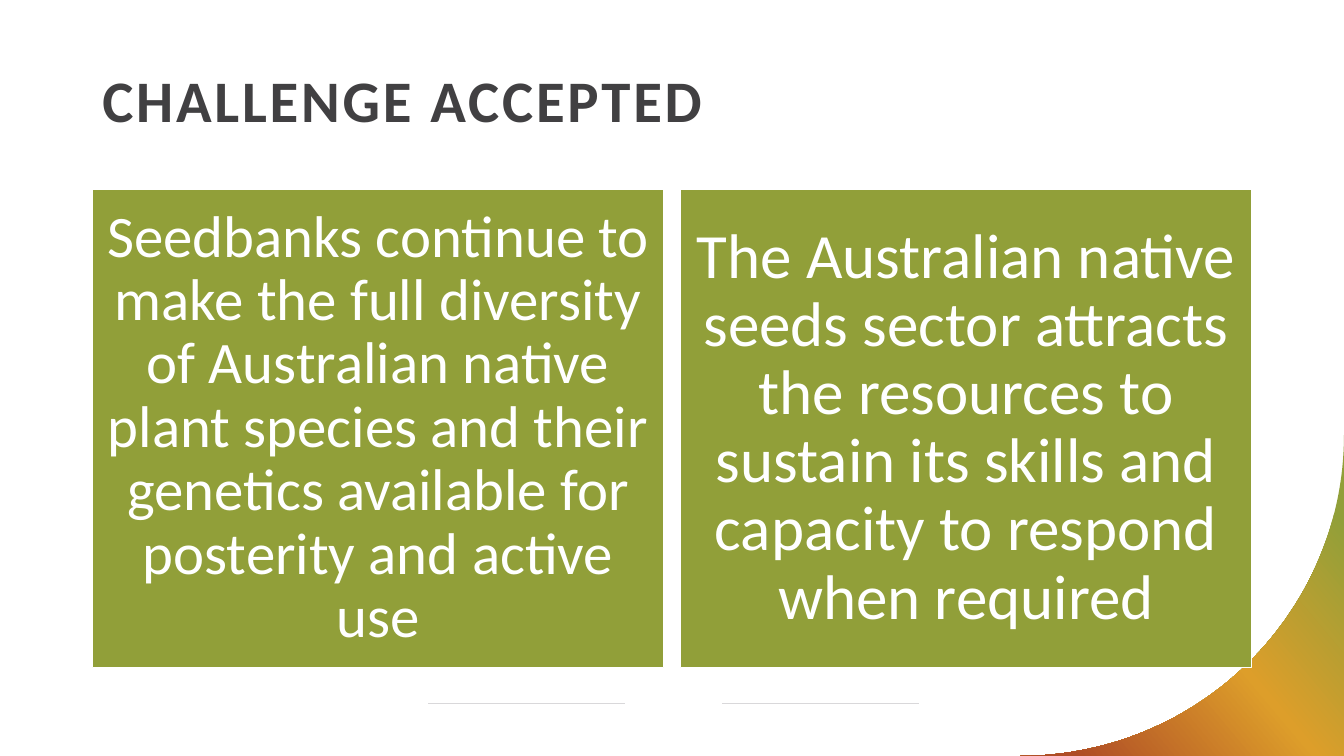
from copy import deepcopy
from math import cos, pi, sin

from lxml import etree
from pptx import Presentation
from pptx.dml.color import RGBColor
from pptx.enum.shapes import MSO_CONNECTOR, MSO_SHAPE
from pptx.enum.text import MSO_ANCHOR, PP_ALIGN
from pptx.oxml.ns import qn
from pptx.util import Inches, Pt

STRAIGHT = MSO_CONNECTOR.STRAIGHT
RECTANGLE = MSO_SHAPE.RECTANGLE
TOP, MIDDLE = MSO_ANCHOR.TOP, MSO_ANCHOR.MIDDLE
LEFT, CENTER = PP_ALIGN.LEFT, PP_ALIGN.CENTER

WHITE = RGBColor(0xFF, 0xFF, 0xFF)
CHARCOAL = RGBColor(0x41, 0x40, 0x42)
PALE_GREY = RGBColor(0xD9, 0xD8, 0xDA)
OLIVE = RGBColor(0x91, 0x9F, 0x39)
AMBER = RGBColor(0xDD, 0x9E, 0x2A)
RUST = RGBColor(0xAF, 0x4C, 0x26)

COLUMNS, ROWS = 160, 90
CARD_LEFT, CARD_PITCH = 11, 70
RULE_LEFT, RULE_PITCH, RULE_WIDTH = 51, 35, 23.4
CARDS = [
    ("Seedbanks continue to make the full diversity of Australian native plant "
     "species and their genetics available for posterity and active use", 42),
    ("The Australian native seeds sector attracts the resources to sustain its "
     "skills and capacity to respond when required", 45),
]


class SeedPage:
    font_name = "Calibri"
    line_spacing = 0.9

    def __init__(self, deck):
        self.page = deck.slides.add_slide(deck.slide_layouts[6])
        self.column = deck.slide_width / COLUMNS
        self.row = deck.slide_height / ROWS

    def place(self, left, top, width, height):
        return (round(left * self.column), round(top * self.row),
                round(width * self.column), round(height * self.row))

    def set_text(self, box, text, size, color, align, anchor):
        frame = box.text_frame
        frame.word_wrap = True
        frame.vertical_anchor = anchor
        frame.text = text
        para = frame.paragraphs[0]
        para.alignment = align
        para.line_spacing = self.line_spacing
        span = para.runs[0]
        span.font.name = self.font_name
        span.font.size = Pt(size)
        span.font.color.rgb = color
        return span

    def title(self, text, left, top, width, height):
        box = self.page.shapes.add_textbox(*self.place(left, top, width, height))
        span = self.set_text(box, text, 42, CHARCOAL, LEFT, TOP)
        span.font.bold = True
        span.font._element.set("spc", "200")

    def card(self, text, size, left, top, width, height):
        box = self.page.shapes.add_shape(RECTANGLE, *self.place(left, top, width, height))
        box.shadow.inherit = False
        box.fill.solid()
        box.fill.fore_color.rgb = OLIVE
        box.line.color.rgb = WHITE
        box.line.width = Pt(1)
        frame = box.text_frame
        frame.margin_left = frame.margin_right = Inches(0.12)
        frame.margin_top = frame.margin_bottom = Inches(0.12)
        self.set_text(box, text, size, WHITE, CENTER, MIDDLE)

    def rule(self, left, top, width):
        x, y, length, _ = self.place(left, top, width, 0)
        line = self.page.shapes.add_connector(STRAIGHT, x, y, x + length, y)
        line.line.color.rgb = PALE_GREY
        line.line.width = Pt(0.5)
        etree.SubElement(line._element.spPr, qn("a:effectLst"))

    def corner(self, left, top, stops, steps=60):
        width, height = COLUMNS - left, ROWS - top
        angles = [step * pi / 2 / steps for step in range(steps + 1)]
        arc = [(left + width * cos(angle), top + height * sin(angle)) for angle in angles]
        builder = self.page.shapes.build_freeform(
            round(COLUMNS * self.column), round(ROWS * self.row), scale=1.0)
        builder.add_line_segments(
            [(round(x * self.column), round(y * self.row)) for x, y in arc])
        shape = builder.convert_to_shape()
        shape.shadow.inherit = False
        shape.line.fill.background()
        shape.fill.gradient()
        shape.fill.gradient_angle = 220
        stop_list = shape._element.spPr.find(".//" + qn("a:gsLst"))
        stop_list.append(deepcopy(stop_list[0]))
        for stop, (position, color) in zip(shape.fill.gradient_stops, stops):
            stop.position = position
            stop.color.rgb = color


def main():
    deck = Presentation()
    deck.slide_width, deck.slide_height = Inches(13.33), Inches(7.5)
    seed_page = SeedPage(deck)
    for index in range(2):
        seed_page.rule(RULE_LEFT + index * RULE_PITCH, 83.75, RULE_WIDTH)
    seed_page.corner(121.5, 51.8, [(0.12, OLIVE), (0.5, AMBER), (0.91, RUST)])
    seed_page.title("CHALLENGE ACCEPTED", CARD_LEFT, 8, 138, 12.2)
    for index, (text, size) in enumerate(CARDS):
        seed_page.card(text, size, CARD_LEFT + index * CARD_PITCH, 22.5, 68, 57)
    deck.save("out.pptx")


if __name__ == "__main__":
    main()
